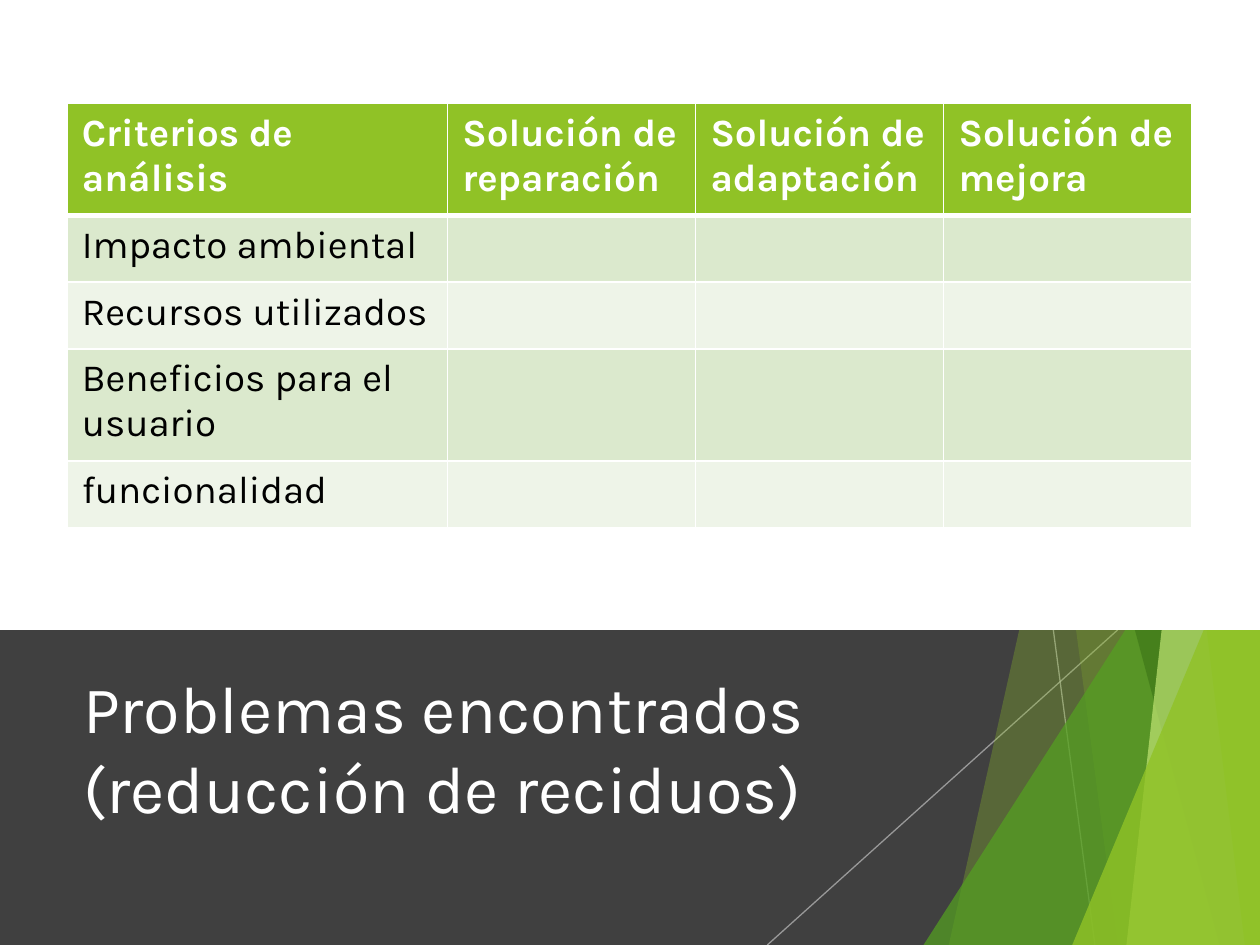
"""Build the slide comparing solutions for waste reduction."""
from dataclasses import dataclass

from lxml import etree
from pptx import Presentation
from pptx.dml.color import RGBColor
from pptx.enum.shapes import MSO_CONNECTOR, MSO_SHAPE
from pptx.enum.text import MSO_ANCHOR, PP_ALIGN
from pptx.oxml.ns import qn
from pptx.util import Pt

RECT, TRIANGLE = MSO_SHAPE.RECTANGLE, MSO_SHAPE.ISOSCELES_TRIANGLE
STRAIGHT = MSO_CONNECTOR.STRAIGHT
MIDDLE, LEFT = MSO_ANCHOR.MIDDLE, PP_ALIGN.LEFT
PX = 9144
W, H, BAND_TOP = 1000, 750, 500


@dataclass(frozen=True)
class Theme:
    font: str = "Karla"
    title_size: int = 38
    table_size: int = 22
    white: str = "FFFFFF"
    black: str = "000000"
    dark: str = "404040"
    line: str = "BFBFBF"
    lime: str = "90C226"
    green: str = "54A021"
    forest: str = "3F7819"
    pale: str = "C0E474"
    bands: tuple = ("EEF4E8", "DBE9CD")


def paint(fill, color, alpha=100):
    fill.solid()
    fill.fore_color.rgb = RGBColor.from_string(color)
    if alpha < 100:
        clr = fill._xPr.find(".//" + qn("a:srgbClr"))
        etree.SubElement(clr, qn("a:alpha"), val=str(alpha * 1000))


def set_font(font, size, color, bold=False):
    font.name, font.size, font.bold = theme.font, Pt(size), bold
    font.color.rgb = RGBColor.from_string(color)


theme = Theme()
prs = Presentation()
prs.slide_width, prs.slide_height = W * PX, H * PX
s = prs.slides.add_slide(prs.slide_layouts[5])
shapes = s.shapes

band = shapes.add_shape(RECT, 0, BAND_TOP * PX, W * PX, (H - BAND_TOP) * PX)
paint(band.fill, theme.dark)
band.line.fill.background()
band.shadow.inherit = False

for x1, x2 in [(836, 869), (887, 609)]:
    ln = shapes.add_connector(STRAIGHT, x1 * PX, BAND_TOP * PX, x2 * PX, H * PX)
    ln.line.width = Pt(0.75)
    paint(ln.line.fill, theme.line, 70)
    etree.SubElement(ln._element.spPr, qn("a:effectLst"))

shards = [
    ([(921, -1), (W, -1), (W, H), (753, H)], theme.lime, 30),
    ([(788, -1), (W, -1), (W, H), (887, H)], theme.lime, 20),
    ((733, 333), theme.green, 72),
    ([(766, -1), (W, -1), (W, H), (968, H)], theme.forest, 70),
    ([(978, -1), (W, -1), (W, H), (894, H)], theme.pale, 70),
    ([(897, -1), (W, -1), (W, H), (988, H)], theme.lime, 65),
    ((851, 393), theme.lime, 80),
]
for outline, color, alpha in shards:
    if isinstance(outline, list):
        builder = shapes.build_freeform(*outline[0], scale=PX)
        builder.add_line_segments(outline[1:])
        sp = builder.convert_to_shape()
    else:
        x, y = outline
        sp = shapes.add_shape(TRIANGLE, x * PX, y * PX, (W - x) * PX, (H - y) * PX)
        sp.adjustments[0] = 1
    paint(sp.fill, color, alpha)
    sp.line.fill.background()
    sp.shadow.inherit = False

title = shapes.title
title.left, title.top, title.width, title.height = 56 * PX, 521 * PX, 705 * PX, 144 * PX
shapes._spTree.append(title._element)
tf = title.text_frame
tf.text = "Problemas encontrados (reducción de reciduos)"
tf.word_wrap = True
tf.vertical_anchor = MIDDLE
p = tf.paragraphs[0]
p.alignment = LEFT
set_font(p.font, theme.title_size, theme.white)

panel = shapes.add_shape(RECT, 0, 0, W * PX, BAND_TOP * PX)
paint(panel.fill, theme.white)
panel.line.fill.background()
panel.shadow.inherit = False

rows = [
    ["Criterios de análisis", "Solución de reparación",
     "Solución de adaptación", "Solución de mejora"],
    ["Impacto ambiental"],
    ["Recursos utilizados"],
    ["Beneficios para el usuario"],
    ["funcionalidad"],
]
col_widths = [302, 197, 197, 197]
row_heights = [89, 53, 53, 89, 53]
table = shapes.add_table(len(rows), len(col_widths), 53 * PX, 82 * PX,
                         sum(col_widths) * PX, sum(row_heights) * PX).table
for col, width in zip(table.columns, col_widths):
    col.width = width * PX
for i, (row, height) in enumerate(zip(table.rows, row_heights)):
    row.height = height * PX
    header = i == 0
    for j, cell in enumerate(row.cells):
        cell.text = rows[i][j] if j < len(rows[i]) else ""
        cell.margin_left = cell.margin_right = 12 * PX
        cell.margin_top = cell.margin_bottom = 6 * PX
        set_font(cell.text_frame.paragraphs[0].font, theme.table_size,
                 theme.white if header else theme.black, header)
        tcPr = cell._tc.get_or_add_tcPr()
        for side in "LRTB":
            thick = (header and side == "B") or (i == 1 and side == "T")
            ln = etree.SubElement(tcPr, qn(f"a:ln{side}"), w=str(Pt(3 if thick else 1)))
            solid = etree.SubElement(ln, qn("a:solidFill"))
            etree.SubElement(solid, qn("a:srgbClr"), val=theme.white)
        paint(cell.fill, theme.lime if header else theme.bands[i % 2])

prs.save("out.pptx")
